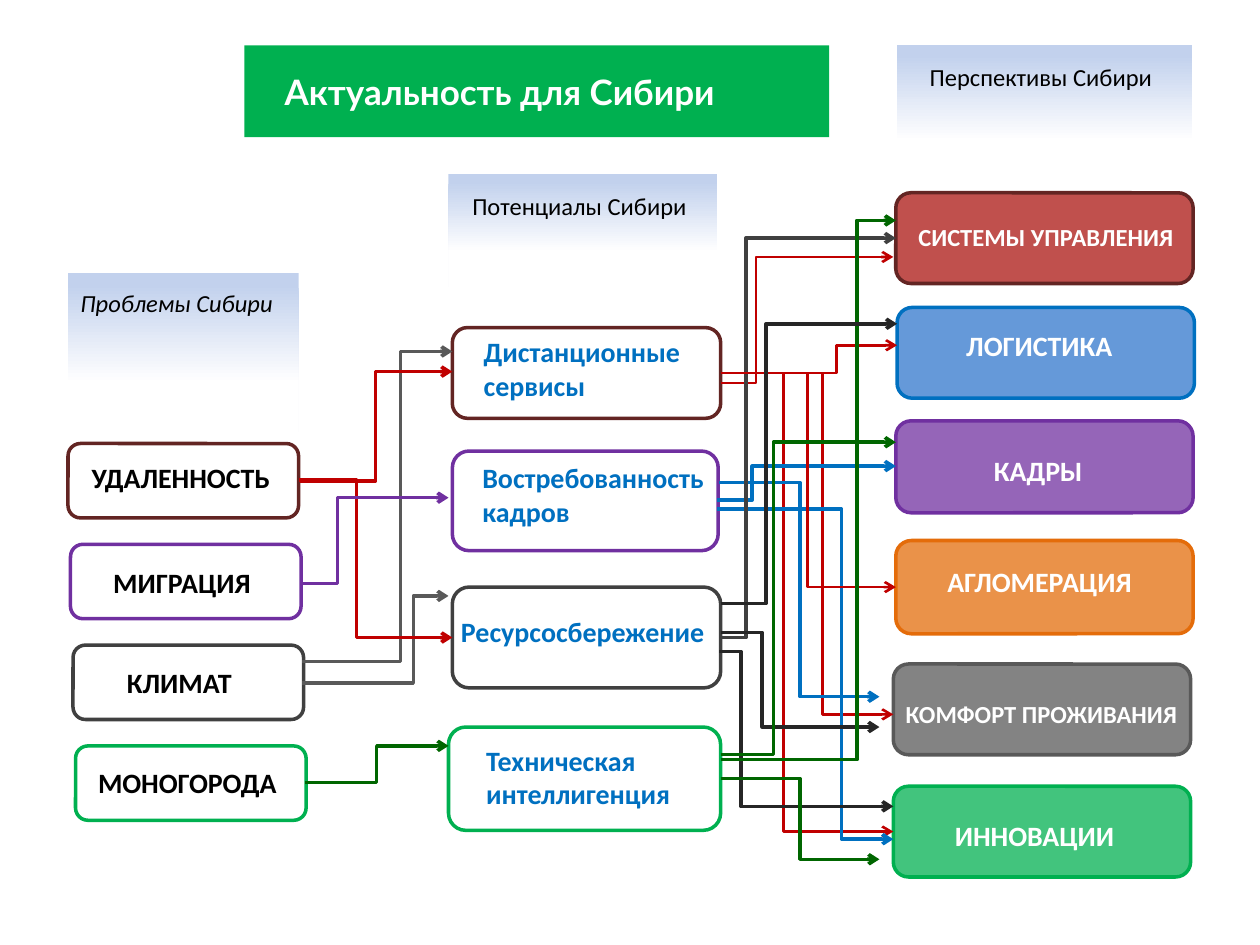
from lxml import etree
from pptx import Presentation
from pptx.dml.color import RGBColor
from pptx.enum.shapes import MSO_CONNECTOR, MSO_SHAPE
from pptx.enum.text import MSO_ANCHOR, MSO_AUTO_SIZE, PP_ALIGN
from pptx.oxml.ns import qn
from pptx.util import Inches, Pt

RED, BLUE, GREEN = "C00000", "0070C0", "006600"
GREY, DARK, BLACK = "595959", "404040", "262626"
MAROON, PURPLE, EMERALD, ORANGE = "632523", "7030A0", "00B050", "E46C0A"

# label, text offset from the box
PROBLEMS = [
    ("УДАЛЕННОСТЬ", (0.09, 0.09), MAROON),
    ("МИГРАЦИЯ", (0.24, 0.12), PURPLE),
    ("КЛИМАТ", (0.33, 0.11), DARK),
    ("МОНОГОРОДА", (0.08, 0.11), EMERALD),
]
PROBLEM_TEXT_WIDTHS = [1.64, 1.31, 1.04, 1.64]

# box relative to the column, label lines, text offset, text width, outline, wrapped
POTENTIALS = [
    ((0.03, 1.22, 2.13, 0.72), ["Дистанционные", "сервисы"], (0.15, 0.01), 1.83, MAROON, False),
    ((0.03, 2.2, 2.11, 0.79), ["Востребованность", "кадров"], (0.14, 0.03), 2.09, PURPLE, False),
    ((0.03, 3.28, 2.13, 0.8), ["Ресурсосбережение"], (-0.03, 0.17), 2.16, DARK, False),
    ((0, 4.39, 2.16, 0.82), ["Техническая", "интеллигенция"], (0.2, 0.08), 1.73, EMERALD, True),
]

# box relative to the column, label, size, text offset, text width, fill, opacity, outline
PERSPECTIVES = [
    ((-0.01, 1.17, 2.36, 0.72), "СИСТЕМЫ УПРАВЛЕНИЯ", 14, (0.08, 0.18), 2.24, "C0504D", 100, MAROON),
    ((0, 2.08, 2.36, 0.72), "ЛОГИСТИКА", 16, (0.45, 0.12), 1.38, "558ED5", 90, BLUE),
    ((-0.01, 2.98, 2.36, 0.73), "КАДРЫ", 16, (0.68, 0.21), 0.91, PURPLE, 74, PURPLE),
    ((-0.01, 3.93, 2.36, 0.74), "АГЛОМЕРАЦИЯ", 16, (0.31, 0.14), 1.68, ORANGE, 74, ORANGE),
    ((-0.03, 4.91, 2.36, 0.72), "КОМФОРТ ПРОЖИВАНИЯ", 14, (0, 0.23), 2.5, GREY, 74, GREY),
    ((-0.03, 5.88, 2.36, 0.72), "ИННОВАЦИИ", 16, (0.39, 0.21), 1.48, EMERALD, 74, EMERALD),
]

# start, end, x of the vertical part, colour, line width
PROBLEM_LINKS = [
    ((2.4, 5.42), (3.56, 4.73), 3.28, GREY, 2),
    ((2.4, 5.25), (3.59, 2.79), 3.18, GREY, 2),
    ((2.38, 3.82), (3.59, 2.95), 2.98, RED, 2),
    ((2.37, 3.81), (3.59, 5.06), 2.83, RED, 2),
    ((2.39, 4.63), (3.56, 3.95), 2.68, PURPLE, 2),
    ((2.42, 6.21), (3.56, 5.92), 2.99, GREEN, 2),
]
POTENTIAL_LINKS = [
    ((5.72, 3.04), (7.09, 2.04), 6, RED, 1.5),
    ((5.72, 2.96), (7.12, 2.74), 6.64, RED, 1.5),
    ((5.72, 2.96), (7.09, 5.67), 6.53, RED, 1.5),
    ((5.72, 2.96), (7.09, 6.6), 6.22, RED, 1.5),
    ((5.69, 3.97), (7.11, 3.7), 5.97, BLUE, 2),
    ((5.71, 3.83), (6.98, 5.53), 6.35, BLUE, 2),
    ((5.69, 4.04), (7.09, 6.66), 6.68, BLUE, 2),
    ((5.72, 5.06), (7.11, 1.89), 5.92, DARK, 2),
    ((5.72, 5.02), (6.98, 5.77), 6.05, BLACK, 2),
    ((5.71, 5.17), (7.09, 6.4), 5.88, BLACK, 2),
    ((5.72, 2.96), (7.11, 4.66), 6.41, RED, 1.5),
    ((5.72, 6.18), (6.98, 6.82), 6.35, GREEN, 2),
    ((5.72, 5.99), (7.11, 3.51), 6.14, GREEN, 2),
    ((5.72, 6.03), (7.11, 1.75), 6.8, GREEN, 2),
    ((5.72, 4.79), (7.12, 2.57), 6.08, BLACK, 2),
]


def color(value):
    return RGBColor.from_string(value)


def add_box(slide, kind, box, fill=None, outline=None, opacity=100):
    shape = slide.shapes.add_shape(kind, *map(Inches, box))
    shape.shadow.inherit = False
    if fill:
        shape.fill.solid()
        shape.fill.fore_color.rgb = color(fill)
        if opacity < 100:
            fill_color = shape.element.spPr.find(qn("a:solidFill"))[0]
            etree.SubElement(fill_color, qn("a:alpha"), val=str(opacity * 1000))
    else:
        shape.fill.background()
    if outline:
        shape.line.color.rgb = color(outline)
        shape.line.width = Pt(2)
    else:
        shape.line.fill.background()
    return shape


def add_run(paragraph, text, size, font_color, font_name="Calibri", bold=True, italic=False):
    run = paragraph.add_run()
    run.text = text
    font = run.font
    font.name, font.size, font.bold, font.italic = font_name, Pt(size), bold, italic
    font.color.rgb = color(font_color)


def add_label(slide, left, top, width, lines, size, font_color, wrap=False, **style):
    height = 0.64 if len(lines) > 1 else 0.37 if size == 16 else 0.34
    frame = slide.shapes.add_textbox(*map(Inches, (left, top, width, height))).text_frame
    frame.word_wrap = wrap
    frame.auto_size = MSO_AUTO_SIZE.SHAPE_TO_FIT_TEXT
    for index, line in enumerate(lines):
        paragraph = frame.add_paragraph() if index else frame.paragraphs[0]
        add_run(paragraph, line, size, font_color, **style)


def add_heading(slide, box, text, offset, width, italic=False):
    """Column heading on a panel that fades to white."""
    panel = add_box(slide, MSO_SHAPE.RECTANGLE, box)
    panel.fill.gradient()
    panel.fill.gradient_angle = 270
    for stop, position, shade in zip(panel.fill.gradient_stops, (0.07, 0.69), ("C2D1ED", "FFFFFF")):
        stop.position = position
        stop.color.rgb = color(shade)
    add_label(slide, box[0] + offset[0], box[1] + offset[1], width, [text], 14, "000000",
              wrap=True, bold=False, italic=italic)


def add_title(slide, box):
    banner = add_box(slide, MSO_SHAPE.RECTANGLE, box, EMERALD)
    title = slide.shapes.title
    title.element.addprevious(banner.element)
    title.left, title.top = Inches(box[0] + 0.22), Inches(box[1] + 0.15)
    title.width, title.height = Inches(4.15), Inches(0.44)
    frame = title.text_frame
    frame.auto_size = MSO_AUTO_SIZE.NONE
    frame.vertical_anchor = MSO_ANCHOR.MIDDLE
    paragraph = frame.paragraphs[0]
    paragraph.alignment = PP_ALIGN.LEFT
    add_run(paragraph, "Актуальность для Сибири", 20, "FFFFFF", "Lato")


def add_problems(slide, left, top):
    add_heading(slide, (left, top, 1.83, 1.26), "Проблемы Сибири", (0, 0.07), 1.84, italic=True)
    for index, ((text, (dx, dy), outline), width) in enumerate(zip(PROBLEMS, PROBLEM_TEXT_WIDTHS)):
        x, y = left + 0.02 * index, top + 1.35 + 0.8 * index
        add_box(slide, MSO_SHAPE.ROUNDED_RECTANGLE, (x, y, 1.83, 0.59), outline=outline)
        add_label(slide, x + dx, y + dy, width, [text], 16, "000000")


def add_potentials(slide, left, top):
    add_heading(slide, (left, top, 2.13, 0.9), "Потенциалы Сибири", (0.09, 0.09), 1.94)
    for (x, y, width, height), lines, (dx, dy), text_width, outline, wrap in POTENTIALS:
        x, y = left + x, top + y
        add_box(slide, MSO_SHAPE.ROUNDED_RECTANGLE, (x, y, width, height), outline=outline)
        add_label(slide, x + dx, y + dy, text_width, lines, 16, BLUE, wrap)


def add_perspectives(slide, left, top):
    add_heading(slide, (left, top, 2.34, 1.1), "Перспективы Сибири", (0.16, 0.08), 2.21)
    for (x, y, width, height), text, size, (dx, dy), text_width, fill, opacity, outline in PERSPECTIVES:
        x, y = left + x, top + y
        add_box(slide, MSO_SHAPE.ROUNDED_RECTANGLE, (x, y, width, height), fill, outline, opacity)
        add_label(slide, x + dx, y + dy, text_width, [text], size, "FFFFFF", wrap=text_width == 2.5)


def add_link(slide, start, end, bend, line_color, width):
    """Elbow arrow whose vertical part stands at x = bend."""
    link = slide.shapes.add_connector(MSO_CONNECTOR.ELBOW, *map(Inches, start + end))
    link.line.color.rgb = color(line_color)
    link.line.width = Pt(width)
    properties = link.element.spPr
    guides = properties.find(qn("a:prstGeom")).get_or_add_avLst()
    ratio = round((bend - start[0]) / (end[0] - start[0]) * 100000)
    etree.SubElement(guides, qn("a:gd"), name="adj1", fmla=f"val {ratio}")
    etree.SubElement(properties.find(qn("a:ln")), qn("a:tailEnd"), type="arrow")
    etree.SubElement(properties, qn("a:effectLst"))


def main():
    presentation = Presentation()
    presentation.slide_width, presentation.slide_height = Inches(10), Inches(7.5)
    slide = presentation.slides.add_slide(presentation.slide_layouts[5])
    add_title(slide, (1.94, 0.36, 4.64, 0.73))
    add_problems(slide, 0.54, 2.17)
    add_potentials(slide, 3.56, 1.38)
    add_perspectives(slide, 7.12, 0.36)
    for link in PROBLEM_LINKS + POTENTIAL_LINKS:
        add_link(slide, *link)
    presentation.save("out.pptx")


if __name__ == "__main__":
    main()
